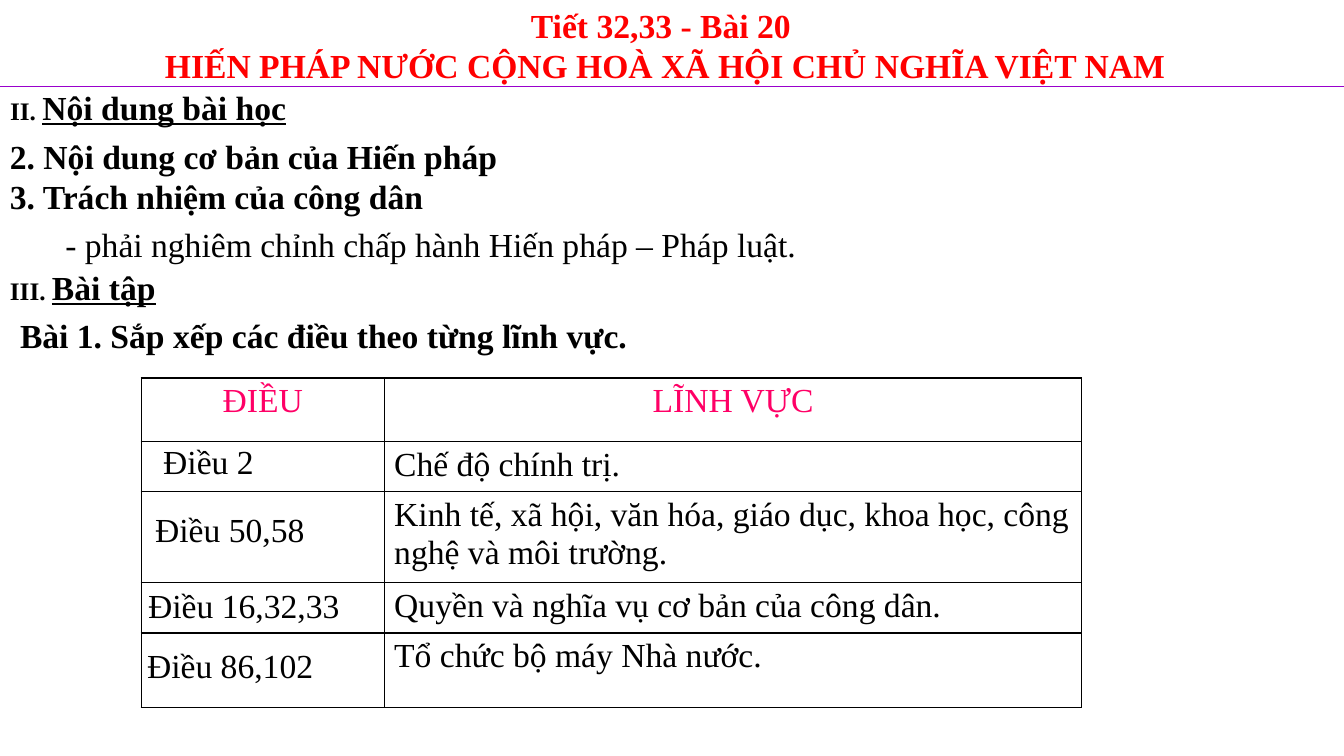
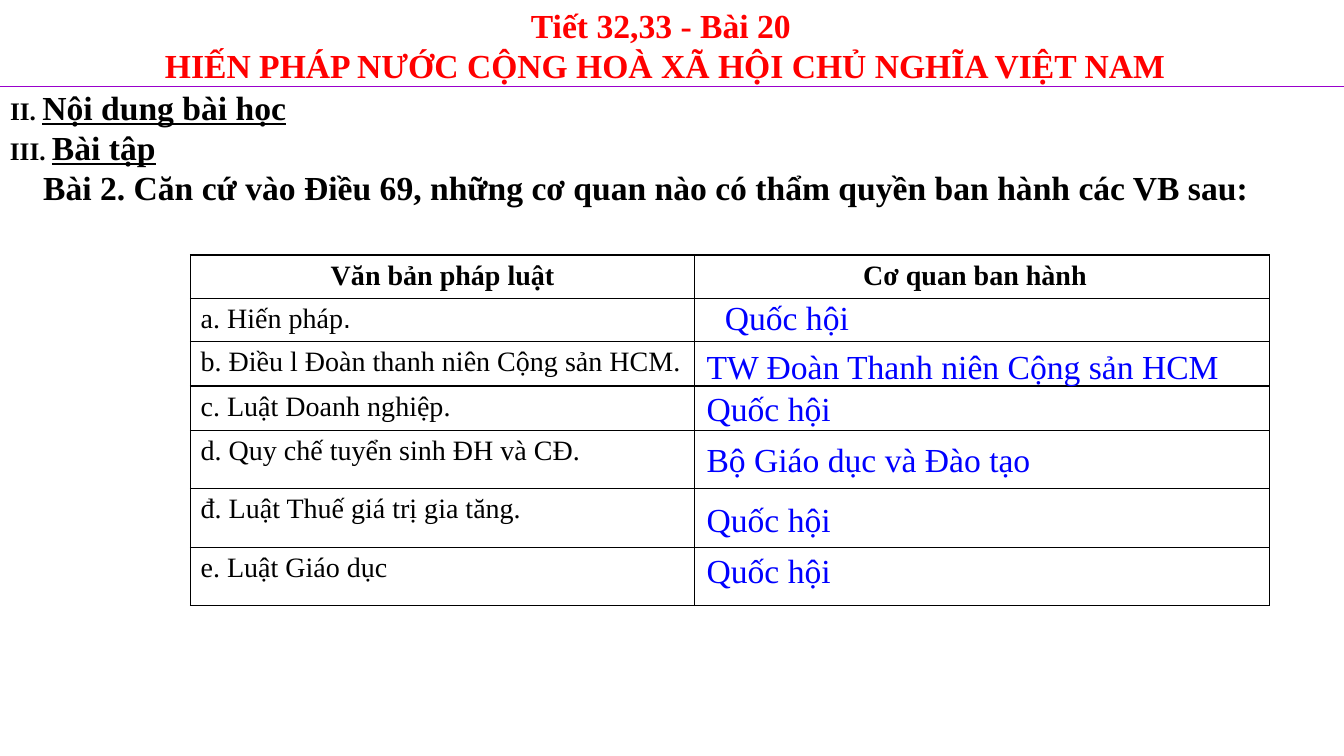
from pptx import Presentation
from pptx.dml.color import RGBColor
from pptx.enum.shapes import MSO_CONNECTOR as Link
from pptx.enum.text import MSO_ANCHOR as Anchor, MSO_AUTO_SIZE as Fit, PP_ALIGN as Align
from pptx.oxml import parse_xml
from pptx.oxml.ns import nsdecls
from pptx.util import Inches, Pt

# Shared look
SERIF, SANS = "Times New Roman", "Arial"
BLACK, WHITE, RED, PINK = "000000", "FFFFFF", "FF0000", "FF0066"
BLUE, PURPLE = "0000FF", "9900CC"
WIDE, HIGH = 13.33, 7.5


def color(code):
    return RGBColor.from_string(code)


def run(text, size=24, ink=BLACK, bold=False, under=False, face=SERIF):
    """Describe one run of text."""
    return text, size, ink, bold, under, face


def head(mark, name):
    """Runs of a numbered section heading."""
    return [run(mark + " ", 18, bold=True), run(name, bold=True, under=True)]


def write(frame, paras, align=Align.LEFT):
    """Fill a text frame, one list of runs per paragraph."""
    for i, runs in enumerate(paras):
        para = frame.paragraphs[0] if i == 0 else frame.add_paragraph()
        para.alignment = align
        para.space_before = Pt(0)
        for text, size, ink, bold, under, face in runs:
            part = para.add_run()
            part.text = text
            font = part.font
            font.name, font.size = face, Pt(size)
            font.bold, font.underline = bold, under
            font.color.rgb = color(ink)


def place(shape, x, y, w, h):
    shape.left, shape.top = Inches(x), Inches(y)
    shape.width, shape.height = Inches(w), Inches(h)
    frame = shape.text_frame
    frame.word_wrap = True
    frame.auto_size = Fit.NONE
    frame.vertical_anchor = Anchor.TOP
    return frame


def box(slide, x, y, w, paras, h=0.5):
    shape = slide.shapes.add_textbox(0, 0, 0, 0)
    frame = place(shape, x, y, w, h)
    write(frame, paras)
    return frame


def indent(para, first, bullet=True):
    """Set the first-line indent; drop the bullet if asked."""
    props = para._p.get_or_add_pPr()
    props.set("marL", "0")
    props.set("indent", str(Inches(first)))
    if not bullet:
        props.append(parse_xml(f"<a:buNone {nsdecls('a')}/>"))


def rule(slide, y):
    line = slide.shapes.add_connector(
        Link.STRAIGHT, 0, Inches(y), Inches(WIDE), Inches(y))
    line.line.color.rgb = color(PURPLE)
    line.line.width = Pt(0.5)
    line._element.spPr.append(parse_xml(f"<a:effectLst {nsdecls('a')}/>"))


def border(cell):
    props = cell._tc.get_or_add_tcPr()
    for side in ("lnL", "lnR", "lnT", "lnB"):
        props.append(parse_xml(
            f'<a:{side} {nsdecls("a")} w="{Pt(1)}"><a:solidFill>'
            f'<a:srgbClr val="{BLACK}"/></a:solidFill></a:{side}>'))


def grid(slide, x, y, cols, rows, cells):
    """Draw a plain ruled table; its first row is centred."""
    shape = slide.shapes.add_table(
        len(rows), len(cols), Inches(x), Inches(y),
        Inches(sum(cols)), Inches(sum(rows)))
    table = shape.table
    table.first_row = table.horz_banding = False
    for col, w in zip(table.columns, cols):
        col.width = Inches(w)
    for row, h in zip(table.rows, rows):
        row.height = Inches(h)
    for r, line in enumerate(cells):
        for c, paras in enumerate(line):
            cell = table.cell(r, c)
            border(cell)
            cell.fill.solid()
            cell.fill.fore_color.rgb = color(WHITE)
            write(cell.text_frame, paras, Align.LEFT if r else Align.CENTER)
    return table


def start(deck):
    """Add a slide with the lesson title, rule and first heading."""
    slide = deck.slides.add_slide(deck.slide_layouts[1])
    back = slide.background.fill
    back.solid()
    back.fore_color.rgb = color(WHITE)
    title, body = slide.placeholders
    write(place(title, 0, 0, 13.11, 0.91), [
        [run("Tiết 32,33 - Bài 20", ink=RED, bold=True)],
        [run(" ", bold=True),
         run("HIẾN PHÁP NƯỚC CỘNG HOÀ XÃ HỘI CHỦ NGHĨA VIỆT NAM",
             ink=RED, bold=True)],
    ], Align.CENTER)
    rule(slide, 0.86)
    frame = place(body, 0, 0.81, 6.73, 0.5)
    write(frame, [head("II.", "Nội dung bài học")])
    indent(frame.paragraphs[0], 0, bullet=False)
    return slide


def fields(deck):
    """Exercise 1: articles sorted by field."""
    slide = start(deck)
    box(slide, 0, 1.3, 5.4, [
        [run("2. Nội dung cơ bản của Hiến pháp", bold=True)],
        [run("3. Trách nhiệm của công dân", bold=True)],
    ], 0.91)
    box(slide, 0.55, 2.17, 8.36,
        [[run("- phải nghiêm chỉnh chấp hành Hiến pháp – Pháp luật.")]])
    box(slide, 0, 2.6, 2.31, [head("III.", "Bài tập")])
    box(slide, 0.1, 3.08, 11.02,
        [[run("Bài 1. Sắp xếp các điều theo từng lĩnh vực.", bold=True)]])

    # Table of fields
    areas = [
        ["Chế độ chính trị."],
        ["Kinh tế, xã hội, văn hóa, giáo dục, khoa học, công",
         "nghệ và môi trường."],
        ["Quyền và nghĩa vụ cơ bản của công dân."],
        ["Tổ chức bộ máy Nhà nước."],
    ]
    cells = [[[[run(t, ink=PINK)]] for t in ("ĐIỀU", "LĨNH VỰC")]]
    cells += [[[], [[run(t)] for t in area]] for area in areas]
    grid(slide, 1.4, 3.75, [2.41, 6.92], [0.63, 0.5, 0.9, 0.5, 0.74], cells)

    # Answers laid over the first column
    for x, y, text in [(1.52, 4.33, "Điều 2"), (1.44, 5, "Điều 50,58"),
                       (1.37, 5.75, "Điều 16,32,33"),
                       (1.36, 6.35, "Điều 86,102")]:
        box(slide, x, y, 2.31, [[run(text)]])


def bodies(deck):
    """Exercise 2: who issues each legal text."""
    slide = start(deck)
    task = box(slide, 0, 1.21, 13.11, [
        head("III.", "Bài tập"),
        [run("Bài 2. Căn cứ vào Điều 69, những cơ quan nào có thẩm quyền "
             "ban hành các VB sau:", bold=True)],
    ], 0.91)
    indent(task.paragraphs[1], 0.33)

    # Table of legal texts
    laws = [
        "b. Điều l Đoàn thanh niên Cộng sản HCM.",
        "c. Luật Doanh nghiệp.",
        "d. Quy chế tuyển sinh ĐH và CĐ.",
        "đ. Luật Thuế giá trị gia tăng.",
        "e. Luật Giáo dục",
    ]
    cells = [[[[run(t, 20, bold=True)]]
              for t in ("Văn bản pháp luật", "Cơ quan ban hành")]]
    cells.append([[[run("a. Hiến pháp", 20), run(".", 20, face=SANS)]], []])
    cells += [[[[run(law, 20)]], []] for law in laws]
    rows = [0.43, 0.43, 0.44, 0.44] + [0.58] * 3
    table = grid(slide, 1.89, 2.53, [5, 5.7], rows, cells)
    table.cell(0, 1).margin_right = Inches(0.24)

    # Answers laid over the second column
    house = "Quốc hội"
    for x, y, text in [(7.09, 2.9, house),
                       (6.91, 3.38, "TW Đoàn Thanh niên Cộng sản HCM"),
                       (6.91, 3.8, house),
                       (6.91, 4.31, "Bộ Giáo dục và Đào tạo"),
                       (6.91, 4.9, house), (6.91, 5.41, house)]:
        box(slide, x, y, 5.83, [[run(text, ink=BLUE)]])


def main():
    deck = Presentation()
    deck.slide_width, deck.slide_height = Inches(WIDE), Inches(HIGH)
    fields(deck)
    bodies(deck)
    deck.save("out.pptx")


if __name__ == "__main__":
    main()
